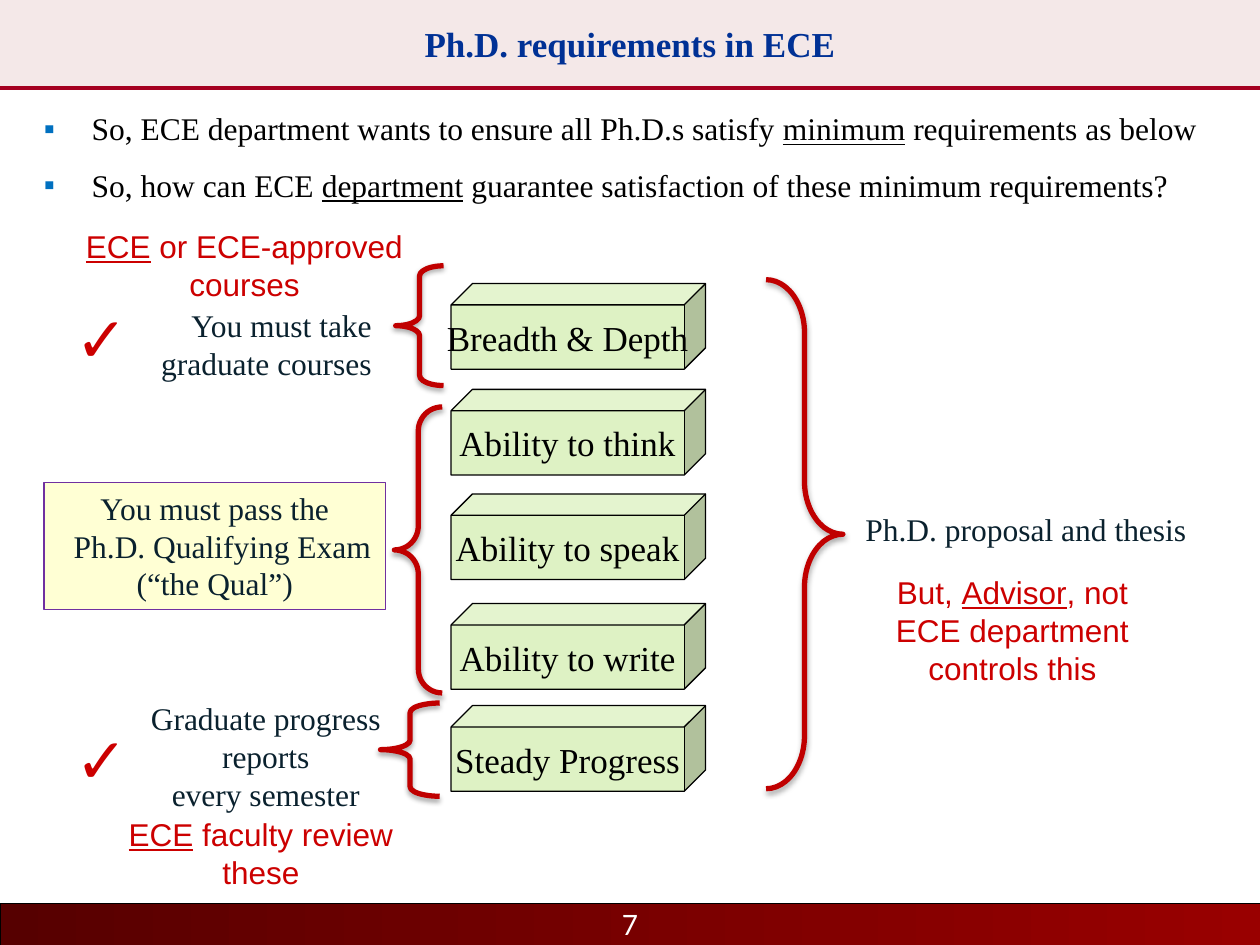
from lxml.etree import SubElement
from pptx import Presentation
from pptx.dml.color import RGBColor
from pptx.enum.shapes import MSO_CONNECTOR, MSO_SHAPE
from pptx.enum.text import MSO_ANCHOR, MSO_AUTO_SIZE, PP_ALIGN
from pptx.oxml.ns import qn
from pptx.util import Inches, Pt

BLACK = RGBColor(0x00, 0x00, 0x00)
WHITE = RGBColor(0xFF, 0xFF, 0xFF)
CRIMSON = RGBColor(0xA5, 0x00, 0x21)
MAROON = RGBColor(0x90, 0x00, 0x00)
FOOTER_DARK = RGBColor(0x56, 0x00, 0x00)
FOOTER_LIGHT = RGBColor(0x99, 0x00, 0x00)
TITLE_BLUE = RGBColor(0x00, 0x31, 0x95)
CUBE_GREEN = RGBColor(0xDE, 0xF2, 0xC4)
BRACE_RED = RGBColor(0xC0, 0x00, 0x00)
REMARK_RED = RGBColor(0xCC, 0x00, 0x00)
INK = RGBColor(0x0A, 0x21, 0x2E)
YELLOW = RGBColor(0xFF, 0xFF, 0x00)
PURPLE = RGBColor(0x70, 0x30, 0xA0)
SERIF, SANS = "Times New Roman", "Arial"

presentation = Presentation()
presentation.slide_width, presentation.slide_height = Inches(10), Inches(7.5)
COLUMN = presentation.slide_width / 100
ROW = presentation.slide_height / 75
slide = presentation.slides.add_slide(presentation.slide_layouts[6])
shapes = slide.shapes


def place(left, top, width, height):
    """Turn columns and rows of the 100 by 75 grid into slide lengths."""
    return (round(left * COLUMN), round(top * ROW),
            round(width * COLUMN), round(height * ROW))


def write(shape, lines, size, color, font=SERIF, align=PP_ALIGN.CENTER, wrap=False):
    """Write one paragraph per line; text between underscores is underlined."""
    frame = shape.text_frame
    frame.word_wrap = wrap
    for index, line in enumerate(lines):
        paragraph = frame.paragraphs[0] if index == 0 else frame.add_paragraph()
        paragraph.alignment = align
        for part, text in enumerate(line.split("_")):
            if text:
                run = paragraph.add_run()
                run.text = text
                run.font.name, run.font.size = font, Pt(size)
                run.font.color.rgb = color
                if part % 2:
                    run.font.underline = True
    return frame


# Header rule, footer band and page number
rule = shapes.add_connector(MSO_CONNECTOR.STRAIGHT, 0, round(7 * ROW),
                            presentation.slide_width, round(7 * ROW))
rule.line.color.rgb, rule.line.width = CRIMSON, Pt(2.25)
SubElement(rule._element.spPr, qn("a:effectLst"))

footer = shapes.add_shape(MSO_SHAPE.RECTANGLE, *place(0, 71.7, 100, 3.3))
footer.shadow.inherit = False
footer.fill.gradient()
footer.fill.gradient_angle = 0
for stop, color, position in zip(footer.fill.gradient_stops,
                                 (FOOTER_DARK, FOOTER_LIGHT), (0, 1)):
    stop.color.rgb, stop.position = color, position
footer.line.color.rgb, footer.line.width = BLACK, Pt(0.25)
page_number = shapes.add_textbox(*place(0, 71.5, 100, 3.7))
write(page_number, ["7"], 16, WHITE, "Lato", wrap=True)

# Title band
title = shapes.add_shape(MSO_SHAPE.RECTANGLE, *place(0, 0, 100, 6.9))
title.line.fill.background()
title_frame = write(title, ["Ph.D. requirements in ECE"], 20, TITLE_BLUE, wrap=True)
title_frame.vertical_anchor = MSO_ANCHOR.MIDDLE
title_frame.paragraphs[0].runs[0].font.bold = True

# Bulleted introduction
introduction = write(shapes.add_textbox(*place(2.5, 6.7, 95.6, 60)), [
    "So, ECE department wants to ensure all Ph.D.s satisfy _minimum_ requirements as below",
    "So, how can ECE _department_ guarantee satisfaction of these minimum requirements?",
], 18, BLACK, align=PP_ALIGN.LEFT, wrap=True)
for paragraph in introduction.paragraphs:
    paragraph.line_spacing = 1.5
    properties = paragraph._p.get_or_add_pPr()
    properties.set("marL", str(Inches(0.38)))
    properties.set("indent", str(-Inches(0.38)))
    bullet_color = SubElement(properties, qn("a:buClr"))
    SubElement(bullet_color, qn("a:srgbClr"), val="0070C0")
    SubElement(properties, qn("a:buFont"), typeface=SANS)
    SubElement(properties, qn("a:buChar"), char="▪")

# Stack of required abilities
for top, ability in [(22.5, "Breadth & Depth"), (30.9, "Ability to think"),
                     (39.2, "Ability to speak"), (47.9, "Ability to write"),
                     (56, "Steady Progress")]:
    cube = shapes.add_shape(MSO_SHAPE.CUBE, *place(35.8, top, 20.2, 6.8))
    cube.shadow.inherit = False
    cube.fill.solid()
    cube.fill.fore_color.rgb = CUBE_GREEN
    cube.line.color.rgb, cube.line.width = BLACK, Pt(0.75)
    write(cube, [ability], 20, BLACK).vertical_anchor = MSO_ANCHOR.MIDDLE

# Braces that tie the abilities to their checks
for kind, area, curve in [
    (MSO_SHAPE.LEFT_BRACE, (31.4, 21.1, 3.8, 9.5), 0.21),
    (MSO_SHAPE.LEFT_BRACE, (31.3, 32.3, 3.8, 22.7), 0.5),
    (MSO_SHAPE.RIGHT_BRACE, (60.8, 22.2, 6.1, 40.4), 0.69),
    (MSO_SHAPE.LEFT_BRACE, (30.2, 55.8, 4.7, 7.4), 0.16),
]:
    brace = shapes.add_shape(kind, *place(*area))
    brace.adjustments[0] = curve
    brace.fill.background()
    brace.line.color.rgb, brace.line.width = BRACE_RED, Pt(3)
    brace.shadow.inherit = False
    effects = brace._element.spPr.find(qn("a:effectLst"))
    shadow = SubElement(effects, qn("a:outerShdw"), blurRad=str(Pt(3.1)),
                        dist=str(Pt(1.8)), dir="5400000", rotWithShape="0")
    shadow_color = SubElement(shadow, qn("a:srgbClr"), val="000000")
    SubElement(shadow_color, qn("a:alpha"), val="35000")

# Qualifying exam box
exam = shapes.add_shape(MSO_SHAPE.RECTANGLE, *place(3.5, 38.3, 27.1, 10.1))
exam.line.color.rgb, exam.line.width = PURPLE, Pt(0.75)
exam_frame = write(exam, ["You must pass the", "Ph.D. Qualifying Exam",
                          "(“the Qual”)"], 18, INK)
exam_frame.vertical_anchor = MSO_ANCHOR.TOP
exam_frame.paragraphs[1]._p.get_or_add_pPr().set("marL", str(Inches(0.12)))

for shape, color, opacity in [(title, MAROON, 9), (exam, YELLOW, 17)]:
    shape.shadow.inherit = False
    shape.fill.solid()
    shape.fill.fore_color.rgb = color
    fill_color = shape._element.spPr.find(qn("a:solidFill"))[0]
    SubElement(fill_color, qn("a:alpha"), val=str(opacity * 1000))

# Requirements, remarks and check marks
for area, lines, size, color, font, align in [
    ((11.6, 23.8, 18.9, 7.1), ["You must take", "graduate courses"],
     18, INK, SERIF, PP_ALIGN.RIGHT),
    ((67.7, 40, 31, 4), ["Ph.D. proposal and thesis"], 18, INK, SERIF, PP_ALIGN.LEFT),
    ((10.8, 55, 20.6, 10.1), ["Graduate progress", "reports", "every semester"],
     18, INK, SERIF, PP_ALIGN.CENTER),
    ((70, 45, 20.7, 10.1), ["But, _Advisor_, not", "ECE department", "controls this"],
     18, REMARK_RED, SANS, PP_ALIGN.CENTER),
    ((5.7, 17.5, 27.4, 7.1), ["_ECE_ or ECE-approved", "courses"],
     18, REMARK_RED, SANS, PP_ALIGN.CENTER),
    ((9.2, 64.2, 23, 7.1), ["_ECE_ faculty review", "these"],
     18, REMARK_RED, SANS, PP_ALIGN.CENTER),
    ((5, 23.3, 6, 7.1), ["✓"], 36, REMARK_RED, SANS, PP_ALIGN.CENTER),
    ((5, 56.7, 6, 7.1), ["✓"], 36, REMARK_RED, SANS, PP_ALIGN.CENTER),
]:
    frame = write(shapes.add_textbox(*place(*area)), lines, size, color, font, align,
                  wrap=align == PP_ALIGN.LEFT)
    frame.auto_size = MSO_AUTO_SIZE.SHAPE_TO_FIT_TEXT

presentation.save("out.pptx")
